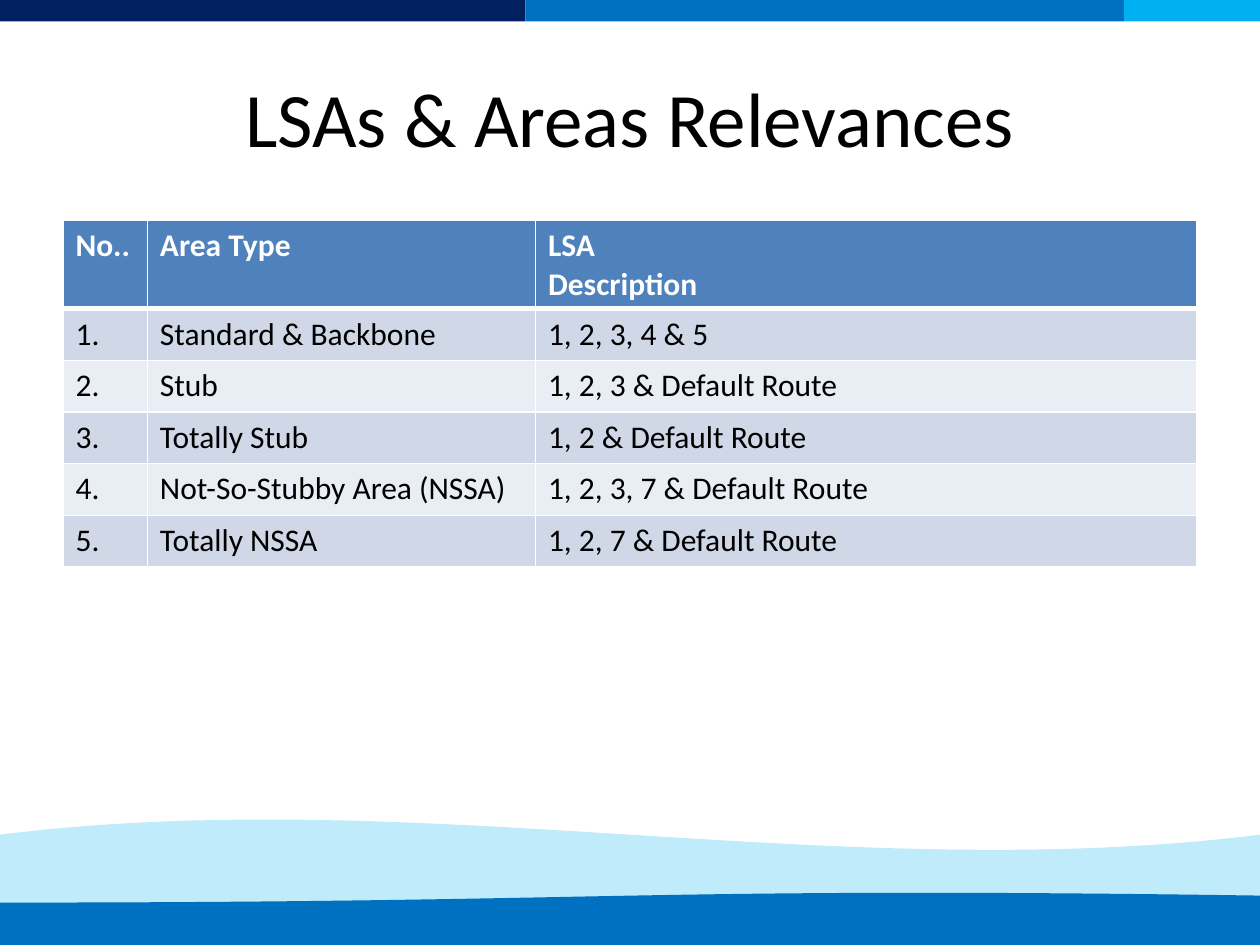
from dataclasses import dataclass

from lxml import etree
from pptx import Presentation
from pptx.dml.color import RGBColor
from pptx.enum.shapes import MSO_SHAPE
from pptx.enum.text import MSO_ANCHOR, PP_ALIGN
from pptx.oxml.ns import qn
from pptx.util import Inches, Pt

RECT, WAVE, DOCUMENT = MSO_SHAPE.RECTANGLE, MSO_SHAPE.WAVE, MSO_SHAPE.FLOWCHART_DOCUMENT
MIDDLE, CENTER = MSO_ANCHOR.MIDDLE, PP_ALIGN.CENTER
SLIDE_W, SLIDE_H = 10, 7.5
MARGIN = 0.5


@dataclass(frozen=True)
class Theme:
    font: str = "Calibri"
    title_size: int = 44
    table_size: int = 18
    text: str = "000000"
    white: str = "FFFFFF"
    navy: str = "002060"
    blue: str = "0070C0"
    sky: str = "00B0F0"
    header: str = "4F81BD"
    bands: tuple = ("D0D8E8", "E9EDF4")
    border: int = 1
    header_border: int = 3


THEME = Theme()

COL_WIDTHS = (0.67, 3.08, 5.25)
ROW_HEIGHT = 0.41
AREA_ROWS = (
    ("No..", "Area Type", "LSA\nDescription"),
    ("1.", "Standard & Backbone", "1, 2, 3, 4 & 5"),
    ("2.", "Stub", "1, 2, 3 & Default Route"),
    ("3.", "Totally Stub", "1, 2 & Default Route"),
    ("4.", "Not-So-Stubby Area (NSSA)", "1, 2, 3, 7 & Default Route"),
    ("5.", "Totally NSSA", "1, 2, 7 & Default Route"),
)


def rgb(color):
    return RGBColor.from_string(color)


def style_text(tf, size, color, bold=False):
    for p in tf.paragraphs:
        for r in p.runs:
            r.font.name = THEME.font
            r.font.size = Pt(size)
            r.font.bold = bold
            r.font.color.rgb = rgb(color)


def add_band(s, kind, x, y, w, h, color, opacity=100, rotation=0):
    sp = s.shapes.add_shape(kind, Inches(x), Inches(y), Inches(w), Inches(h))
    sp.shadow.inherit = False
    sp.rotation = rotation
    sp.fill.solid()
    sp.fill.fore_color.rgb = rgb(color)
    sp.line.fill.background()
    if opacity < 100:
        clr = sp.fill._xPr.find(".//" + qn("a:srgbClr"))
        etree.SubElement(clr, qn("a:alpha"), val=str(opacity * 1000))


def add_decoration(s):
    # Waves along the foot
    add_band(s, WAVE, 0, SLIDE_H - 1, SLIDE_W, 1, THEME.sky, opacity=25)
    # Strip along the top edge
    x = 0
    for width, color in ((4.17, THEME.navy), (4.75, THEME.blue), (1.08, THEME.sky)):
        add_band(s, RECT, x, 0, width, 0.17, color)
        x += width
    add_band(s, DOCUMENT, 0, SLIDE_H - 0.42, SLIDE_W, 0.42, THEME.blue, rotation=180)


def add_title(s, text):
    sp = s.shapes.add_textbox(Inches(MARGIN), Inches(0.3),
                              Inches(SLIDE_W - 2 * MARGIN), Inches(1.25))
    tf = sp.text_frame
    tf.word_wrap = True
    tf.vertical_anchor = MIDDLE
    tf.text = text
    tf.paragraphs[0].alignment = CENTER
    style_text(tf, THEME.title_size, THEME.text)


def set_borders(cell, top, bottom):
    tc_pr = cell._tc.get_or_add_tcPr()
    sides = {"L": THEME.border, "R": THEME.border, "T": top, "B": bottom}
    # Border lines come before the fill in the cell properties
    for i, (side, width) in enumerate(sides.items()):
        ln = etree.Element(qn("a:ln" + side), w=str(Pt(width)))
        fill = etree.SubElement(ln, qn("a:solidFill"))
        etree.SubElement(fill, qn("a:srgbClr"), val=THEME.white)
        tc_pr.insert(i, ln)


def add_area_table(s, rows):
    frame = s.shapes.add_table(len(rows), len(COL_WIDTHS), Inches(MARGIN), Inches(1.75),
                               Inches(sum(COL_WIDTHS)), Inches(ROW_HEIGHT * len(rows)))
    table = frame.table
    for col, width in zip(table.columns, COL_WIDTHS):
        col.width = Inches(width)
    for i, row in enumerate(rows):
        table.rows[i].height = Inches(ROW_HEIGHT)
        is_header = i == 0
        for j, text in enumerate(row):
            cell = table.cell(i, j)
            cell.text_frame.text = text
            style_text(cell.text_frame, THEME.table_size,
                       THEME.white if is_header else THEME.text, is_header)
            cell.fill.solid()
            cell.fill.fore_color.rgb = rgb(THEME.header if is_header
                                           else THEME.bands[(i - 1) % 2])
            set_borders(cell,
                        top=THEME.header_border if i == 1 else THEME.border,
                        bottom=THEME.header_border if is_header else THEME.border)


def main():
    prs = Presentation()
    prs.slide_width, prs.slide_height = Inches(SLIDE_W), Inches(SLIDE_H)
    s = prs.slides.add_slide(prs.slide_layouts[6])
    s.background.fill.solid()
    s.background.fill.fore_color.rgb = rgb(THEME.white)
    add_decoration(s)
    add_title(s, "LSAs & Areas Relevances")
    add_area_table(s, AREA_ROWS)
    prs.save("out.pptx")


if __name__ == "__main__":
    main()
